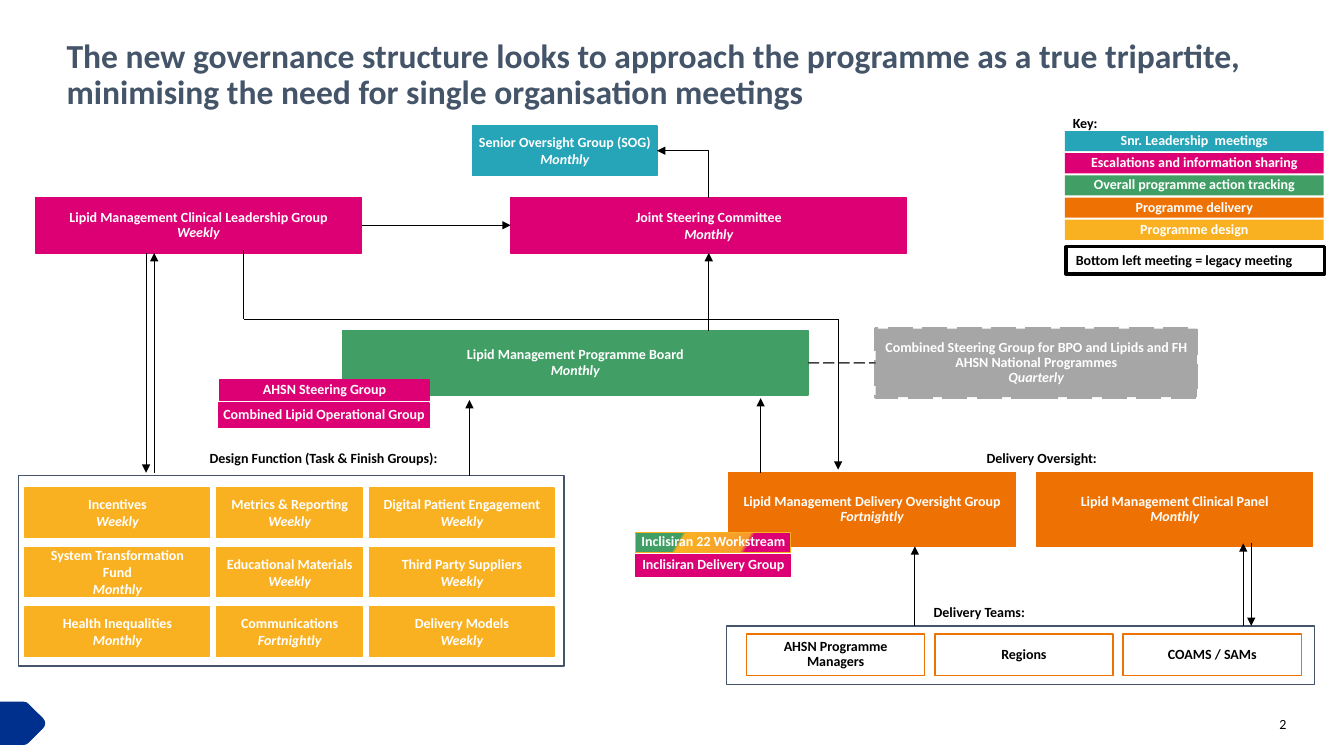
from dataclasses import dataclass
from lxml.etree import SubElement
from pptx import Presentation
from pptx.dml.color import RGBColor
from pptx.enum.dml import MSO_LINE
from pptx.enum.shapes import MSO_CONNECTOR, MSO_SHAPE
from pptx.enum.text import MSO_ANCHOR, MSO_AUTO_SIZE, PP_ALIGN
from pptx.oxml.ns import qn
from pptx.util import Pt


@dataclass(frozen=True)
class Theme:
    font: str = "Calibri"
    title_size: float = 24
    text_size: float = 10
    title: str = "445469"
    black: str = "000000"
    white: str = "FFFFFF"
    navy: str = "00308D"
    frame: str = "44546A"
    teal: str = "26A5B8"
    pink: str = "DD0075"
    green: str = "419F65"
    orange: str = "EE7203"
    amber: str = "F9B122"
    blend: str = "F69C2C"
    grey: str = "A6A6A6"
    dash: str = "404040"


T = Theme()
MARGIN = 1.44


def apply(obj, **values):
    for name, value in values.items():
        setattr(obj, name, value)


def rgb(color):
    return RGBColor.from_string(color)


def set_font(font, color, size=T.text_size, bold=True, italic=False):
    apply(font, name=T.font, size=Pt(size), bold=bold, italic=italic)
    font.color.rgb = rgb(color)


def set_frame(tf, x=0, y=0, anchor=MSO_ANCHOR.TOP):
    apply(tf, word_wrap=True, auto_size=MSO_AUTO_SIZE.NONE, vertical_anchor=anchor,
          margin_left=Pt(x), margin_right=Pt(x), margin_top=Pt(y), margin_bottom=Pt(y))


def write(tf, lines, color, align, spacing=1.0, italic_last=False, bold=True):
    for i, line in enumerate(lines):
        p = tf.paragraphs[0] if i == 0 else tf.add_paragraph()
        apply(p, alignment=align, line_spacing=spacing)
        r = p.add_run()
        r.text = line
        set_font(r.font, color, bold=bold, italic=italic_last and i == len(lines) - 1)


def add_rect(s, at, fill=None, line=None, width=1, kind=MSO_SHAPE.RECTANGLE):
    sp = s.shapes.add_shape(kind, *map(Pt, at))
    sp.shadow.inherit = False
    if fill:
        sp.fill.solid()
        sp.fill.fore_color.rgb = rgb(fill)
    else:
        sp.fill.background()
    if line:
        sp.line.color.rgb = rgb(line)
        sp.line.width = Pt(width)
    else:
        sp.line.fill.background()
    return sp


def add_meeting(s, at, fill, name, frequency=None, margins=(MARGIN, MARGIN), spacing=0.9):
    sp = add_rect(s, at, fill, fill)
    set_frame(sp.text_frame, *margins, anchor=MSO_ANCHOR.MIDDLE)
    lines = [name, frequency] if frequency else [name]
    write(sp.text_frame, lines, T.white, PP_ALIGN.CENTER, spacing, bool(frequency))
    return sp


def add_label(s, at, text, align=PP_ALIGN.LEFT, margins=(0, 0), anchor=MSO_ANCHOR.TOP, bold=True):
    tf = s.shapes.add_textbox(*map(Pt, at)).text_frame
    set_frame(tf, *margins, anchor=anchor)
    write(tf, [text], T.black, align, bold=bold)


def add_link(s, points, begin=None, end=None, arrow="tailEnd", color=T.black, width=0.5,
             dash=None, kind=MSO_CONNECTOR.STRAIGHT):
    c = s.shapes.add_connector(kind, *map(Pt, points))
    if begin:
        c.begin_connect(*begin)
    if end:
        c.end_connect(*end)
    c.line.color.rgb = rgb(color)
    c.line.width = Pt(width)
    if dash:
        c.line.dash_style = dash
    spPr = c._element.spPr
    if arrow:
        SubElement(spPr.find(qn("a:ln")), qn("a:" + arrow), type="triangle")
    SubElement(spPr, qn("a:effectLst"))
    if kind == MSO_CONNECTOR.ELBOW:
        spPr.find(qn("a:prstGeom")).set("prst", "bentConnector2")


def set_gradient(sp, stops, angle):
    sp.fill.gradient()
    sp.fill.gradient_angle = angle
    gs_list = sp._element.spPr.find(".//" + qn("a:gsLst"))
    gs_list.clear()
    for percent, color in stops:
        gs = SubElement(gs_list, qn("a:gs"), pos=str(percent * 1000))
        SubElement(gs, qn("a:srgbClr"), val=color)


def add_title(s, text):
    sp = s.shapes.title
    apply(sp, left=Pt(41.8), top=Pt(22.3), width=Pt(877.7), height=Pt(63.4))
    set_frame(sp.text_frame, 5.76, 5.76)
    p = sp.text_frame.paragraphs[0]
    p.text = text
    apply(p, alignment=PP_ALIGN.LEFT, line_spacing=0.9)
    set_font(p.runs[0].font, T.title, T.title_size)


def add_key(s):
    add_label(s, (759.6, 78.5, 111.6, 19.4), "Key:", margins=(7.2, 3.6))
    entries = [(T.teal, "Snr. Leadership  meetings"),
               (T.pink, "Escalations and information sharing"),
               (T.green, "Overall programme action tracking"),
               (T.orange, "Programme delivery"),
               (T.amber, "Programme design")]
    for i, (color, name) in enumerate(entries):
        sp = add_meeting(s, (761, 93.6 + 15.84 * i, 185, 14.4), color, name)
        sp.line.fill.background()
    sp = add_rect(s, (761.8, 176.4, 185, 19.4), line=T.black, width=2.25)
    set_frame(sp.text_frame, 7.2, 3.6)
    write(sp.text_frame, ["Bottom left meeting = legacy meeting"], T.black, PP_ALIGN.LEFT)


def add_design_groups(s):
    add_label(s, (149.8, 321.1, 209.5, 15.1), "Design Function (Task & Finish Groups):")
    add_rect(s, (13, 339.8, 390.2, 136.1), line=T.frame)
    columns = [(18, 131.8), (154.8, 104.4), (264.2, 131.8)]
    rows = [[("Incentives", "Weekly"), ("Metrics & Reporting", "Weekly"),
             ("Digital Patient Engagement", "Weekly")],
            [("System Transformation Fund", "Monthly"), ("Educational Materials", "Weekly"),
             ("Third Party Suppliers", "Weekly")],
            [("Health Inequalities", "Monthly"), ("Communications", "Fortnightly"),
             ("Delivery Models", "Weekly")]]
    for i, row in enumerate(rows):
        for (x, w), group in zip(columns, row):
            add_meeting(s, (x, 348.5 + 42.5 * i, w, 35.3), T.amber, *group,
                        margins=(7.2, 3.6), spacing=1.0)


def add_delivery_teams(s):
    add_label(s, (658.8, 431.3, 82.1, 16.6), "Delivery Teams:", PP_ALIGN.CENTER)
    add_rect(s, (519.1, 447.1, 420.5, 41.8), line=T.frame)
    teams = [["AHSN Programme", "Managers"], ["Regions"], ["COAMS / SAMs"]]
    for i, lines in enumerate(teams):
        sp = add_rect(s, (533.5 + 134.6 * i, 452.9, 127.4, 29.5), line=T.orange)
        set_frame(sp.text_frame, MARGIN, MARGIN, MSO_ANCHOR.MIDDLE)
        write(sp.text_frame, lines, T.black, PP_ALIGN.CENTER, 0.9)


def add_meetings(s):
    committee = add_meeting(s, (365, 141.1, 283, 39.6), T.pink, "Joint Steering Committee",
                            "Monthly", spacing=1.0)
    senior = add_meeting(s, (337.7, 90, 131.8, 35.3), T.teal, "Senior Oversight Group (SOG)",
                         "Monthly", spacing=1.0)
    leadership = add_meeting(s, (25.2, 141.1, 233.3, 39.6), T.pink,
                             "Lipid Management Clinical Leadership Group", "Weekly")
    board = add_meeting(s, (244.8, 236.2, 332.6, 46.1), T.green,
                        "Lipid Management Programme Board", "Monthly")
    combined = add_meeting(s, (625.7, 234.7, 229.7, 49), T.grey,
                           "Combined Steering Group for BPO and Lipids and FH AHSN National Programmes",
                           "Quarterly")
    apply(combined.line, width=Pt(2.25), dash_style=MSO_LINE.LONG_DASH)
    add_label(s, (673.9, 321.1, 141.1, 14.4), "Delivery Oversight:", PP_ALIGN.CENTER)
    add_meeting(s, (520.6, 337.7, 205.2, 52.6), T.orange,
                "Lipid Management Delivery Oversight Group", "Fortnightly")
    add_meeting(s, (740.9, 337.7, 197.3, 52.6), T.orange, "Lipid Management Clinical Panel", "Monthly")
    add_meeting(s, (157, 271.4, 149.8, 14.4), T.pink, "AHSN Steering Group")
    add_meeting(s, (156.2, 288, 150.5, 17.3), T.pink, "Combined Lipid Operational Group")
    workstream = add_meeting(s, (454.3, 380.2, 110.9, 14.4), T.amber, "Inclisiran 22 Workstream")
    set_gradient(workstream, [(0, T.pink), (28, T.pink), (31, T.blend), (70, T.amber),
                              (72, T.green), (82, T.green)], 150)
    add_meeting(s, (454.3, 396, 110.9, 15.8), T.pink, "Inclisiran Delivery Group")

    add_link(s, (469.5, 107.6, 506.5, 141.1), (senior, 3), (committee, 0), "headEnd",
             kind=MSO_CONNECTOR.ELBOW)
    add_link(s, (258.5, 160.9, 365, 160.9), (leadership, 3), (committee, 1))
    add_link(s, (506.5, 236.2, 506.5, 180.7), end=(committee, 2))
    add_link(s, (577.4, 259.2, 625.7, 259.2), (board, 3), (combined, 1), None, T.dash, 1,
             MSO_LINE.LONG_DASH)


def add_arrows(s):
    for x, start, end in [(104.4, 180.7, 337.7), (110.2, 337.7, 180.7), (335.5, 339.8, 285.8),
                          (543.6, 337.7, 284.4), (653.8, 447.1, 390.3), (888.5, 447.1, 388.1),
                          (894.2, 388.1, 447.1), (599, 228.2, 335.5)]:
        add_link(s, (x, start, x, end))
    add_link(s, (174.2, 178.6, 174.2, 228.2), arrow=None)
    add_link(s, (599, 228.2, 174.2, 228.2), arrow=None)


def main():
    prs = Presentation()
    apply(prs, slide_width=Pt(960.48), slide_height=Pt(540))
    s = prs.slides.add_slide(prs.slide_layouts[5])
    add_rect(s, (-13, 506.2, 40.3, 20.9), T.navy, T.navy, 10, MSO_SHAPE.PENTAGON)
    add_title(s, "The new governance structure looks to approach the programme as a true "
                 "tripartite, minimising the need for single organisation meetings")
    add_label(s, (864, 502.6, 55.4, 28.8), "2", PP_ALIGN.RIGHT, anchor=MSO_ANCHOR.MIDDLE, bold=False)
    add_key(s)
    add_design_groups(s)
    add_delivery_teams(s)
    add_meetings(s)
    add_arrows(s)
    prs.save("out.pptx")


if __name__ == "__main__":
    main()
